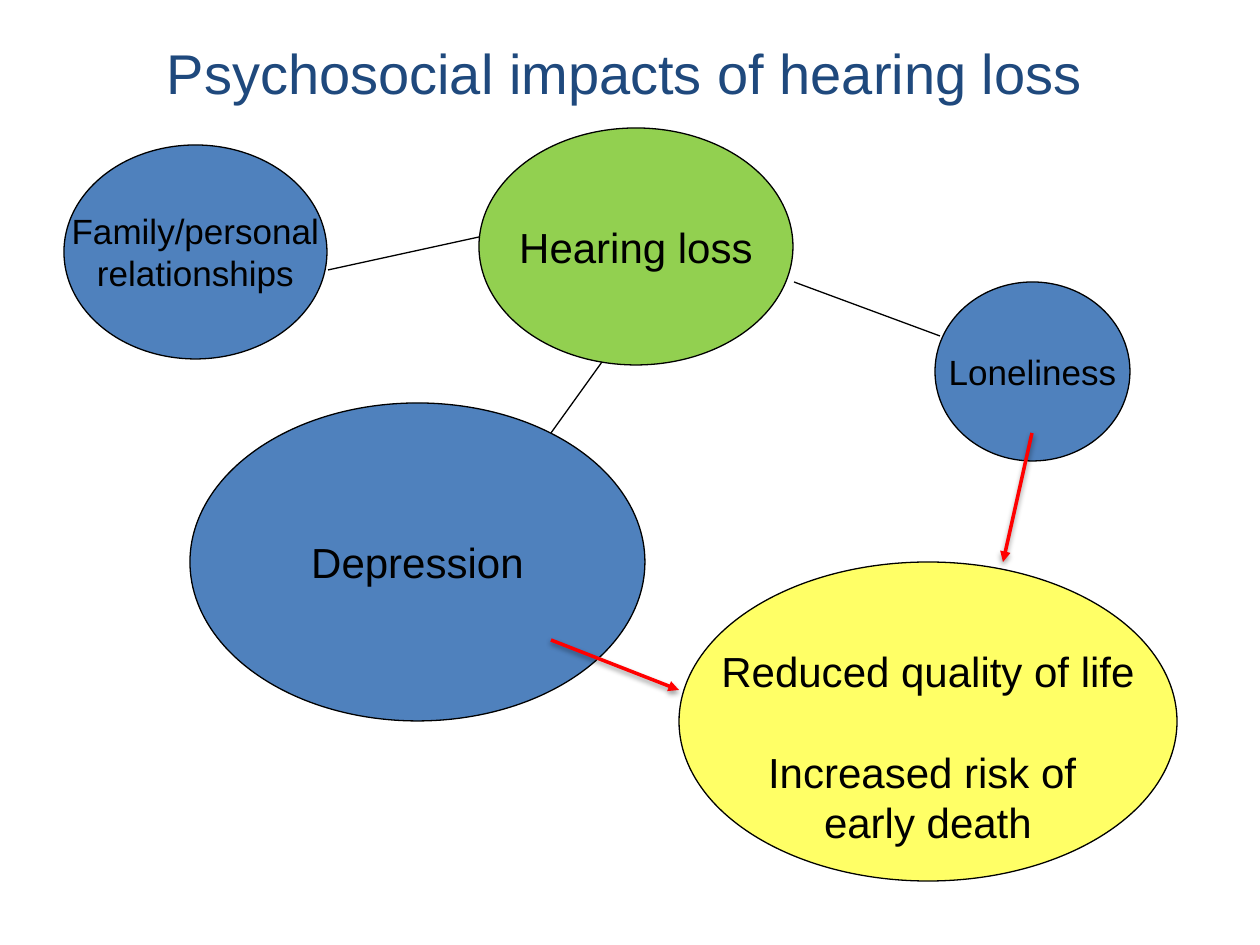
"""Draw a map of the psychosocial impacts of hearing loss."""
import dataclasses
import typing

import pptx
import pptx.dml.color
import pptx.enum.shapes
import pptx.enum.text
import pptx.oxml
import pptx.oxml.ns
import pptx.util

SCALE = 914400 / 126
MIDDLE = pptx.enum.text.MSO_ANCHOR.MIDDLE
TOP = pptx.enum.text.MSO_ANCHOR.TOP
CENTER = pptx.enum.text.PP_ALIGN.CENTER


@dataclasses.dataclass(frozen=True)
class Theme:
    font: str = "Arial"
    ink: str = "000000"
    title: str = "1F497D"
    cause: str = "92D050"
    effect: str = "4F81BD"
    result: str = "FFFF66"
    arrow: str = "FF0000"
    head: int = 32
    large: int = 24
    small: int = 20
    thin: float = 0.75
    thick: float = 2


THEME = Theme()


class Bubble(typing.NamedTuple):
    box: tuple[int, int, int, int]
    fill: str
    size: int
    lines: tuple[str, ...]
    inset: int = 6
    gap: int = 0


class Link(typing.NamedTuple):
    start: tuple[int, int]
    end: tuple[int, int]
    arrow: bool = False


BUBBLES = (
    Bubble((479, 128, 314, 237), THEME.cause, THEME.large, ("Hearing loss",)),
    Bubble((190, 403, 455, 318), THEME.effect, THEME.large, ("Depression",)),
    Bubble((935, 282, 195, 179), THEME.effect, THEME.small, ("Loneliness",)),
    Bubble((64, 145, 263, 214), THEME.effect, THEME.small,
           ("Family/personal", "relationships")),
    Bubble((679, 562, 498, 319), THEME.result, THEME.large,
           ("Reduced quality of life", "Increased risk of ", "early death"),
           inset=56, gap=50),
)
LINKS = (
    Link((328, 270), (479, 237)),
    Link((940, 336), (794, 282)),
    Link((551, 433), (602, 362)),
    Link((1032, 433), (1003, 562), True),
    Link((551, 640), (679, 690), True),
)


def px(count: int) -> pptx.util.Emu:
    return pptx.util.Emu(round(count * SCALE))


def tint(code: str) -> pptx.dml.color.RGBColor:
    return pptx.dml.color.RGBColor.from_string(code)


def apply(item: typing.Any, form: dict[str, typing.Any]) -> None:
    for name, value in form.items():
        setattr(item, name, value)


def write(frame, lines: tuple[str, ...], size: int, color: str,
          form: dict[str, typing.Any], gap: int = 0) -> None:
    apply(frame, form)
    for at, text in enumerate(lines):
        para = frame.add_paragraph() if at else frame.paragraphs[0]
        space = px(gap if at == 1 else 0)
        apply(para, {"alignment": CENTER, "space_before": space})
        run = para.add_run()
        run.text = text
        apply(run.font, {"name": THEME.font, "size": pptx.util.Pt(size)})
        run.font.color.rgb = tint(color)


def stroke(line, color: str, width: float) -> None:
    line.color.rgb = tint(color)
    line.width = pptx.util.Pt(width)


def draw_title(slide) -> None:
    box = slide.shapes.add_textbox(*map(px, (-5, 35, 1260, 110)))
    form = {"word_wrap": True, "vertical_anchor": TOP, "margin_top": px(3)}
    write(box.text_frame, ("Psychosocial impacts of hearing loss",),
          THEME.head, THEME.title, form)


def draw_bubble(slide, item: Bubble) -> None:
    kind = pptx.enum.shapes.MSO_SHAPE.OVAL
    shape = slide.shapes.add_shape(kind, *map(px, item.box))
    shape.shadow.inherit = False
    shape.fill.solid()
    shape.fill.fore_color.rgb = tint(item.fill)
    stroke(shape.line, THEME.ink, THEME.thin)
    form = {"word_wrap": False, "vertical_anchor": MIDDLE,
            "margin_top": px(item.inset)}
    write(shape.text_frame, item.lines, item.size, THEME.ink, form, item.gap)


def draw_link(slide, item: Link) -> None:
    kind = pptx.enum.shapes.MSO_CONNECTOR.STRAIGHT
    line = slide.shapes.add_connector(kind, *map(px, item.start + item.end))
    color, width = ((THEME.arrow, THEME.thick) if item.arrow
                    else (THEME.ink, THEME.thin))
    stroke(line.line, color, width)
    space = pptx.oxml.ns.nsdecls("a")
    shade = ""
    if item.arrow:
        tip = pptx.oxml.parse_xml(f'<a:tailEnd {space} type="triangle"/>')
        line.line._get_or_add_ln().append(tip)
        blur, drop = pptx.util.Pt(3.1), pptx.util.Pt(1.6)
        shade = (f'<a:outerShdw blurRad="{blur}" dist="{drop}" dir="5400000" '
                 f'rotWithShape="0"><a:srgbClr val="{THEME.ink}">'
                 '<a:alpha val="38000"/></a:srgbClr></a:outerShdw>')
    effect = f"<a:effectLst {space}>{shade}</a:effectLst>"
    line._element.spPr.append(pptx.oxml.parse_xml(effect))


def main() -> None:
    deck = pptx.Presentation()
    apply(deck, {"slide_width": px(1260), "slide_height": px(945)})
    slide = deck.slides.add_slide(deck.slide_layouts[6])
    draw_title(slide)
    for item in BUBBLES:
        draw_bubble(slide, item)
    for item in LINKS:
        draw_link(slide, item)
    deck.save("out.pptx")


if __name__ == "__main__":
    main()
